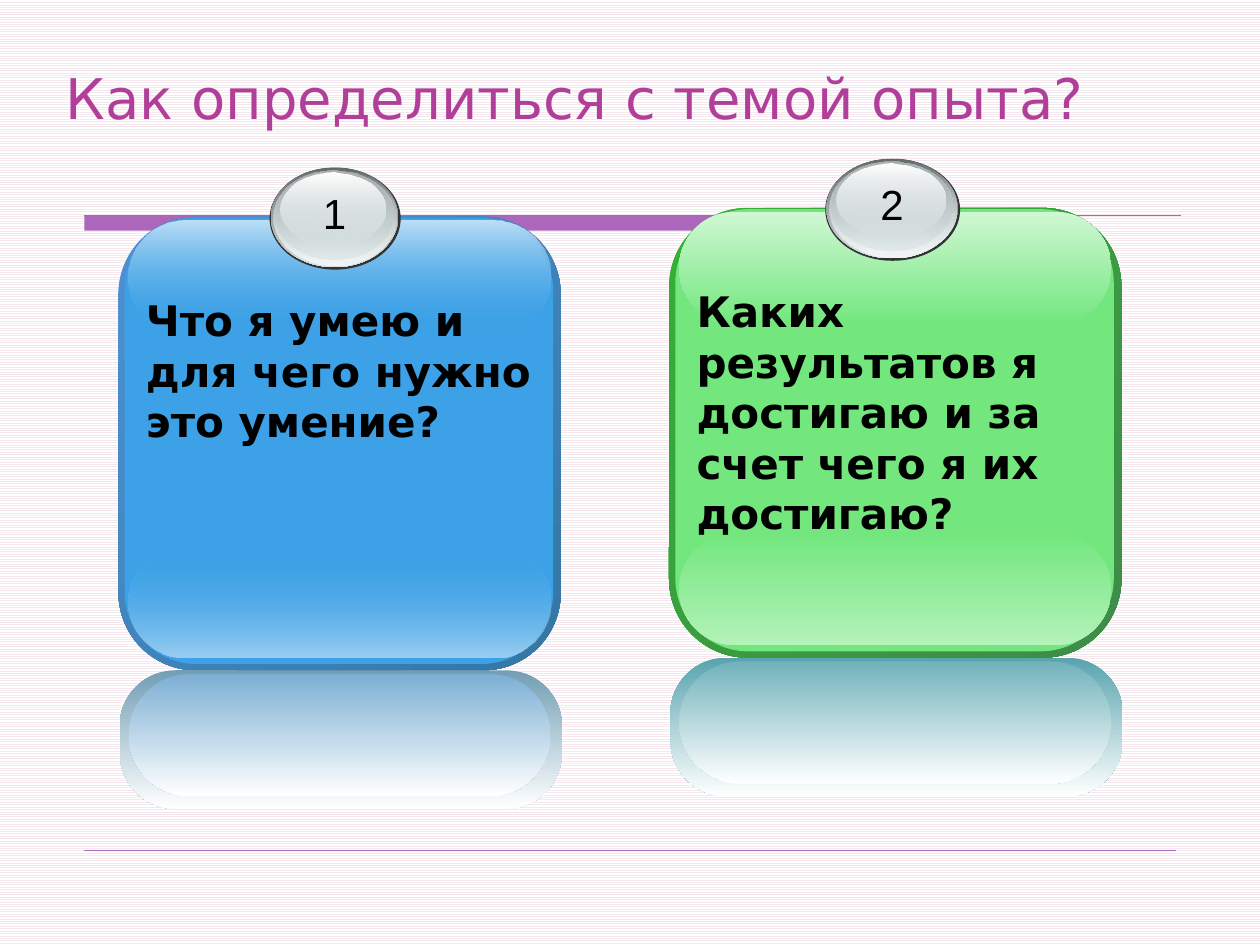
from lxml import etree
from pptx import Presentation
from pptx.dml.color import RGBColor
from pptx.enum.dml import MSO_PATTERN
from pptx.enum.shapes import MSO_CONNECTOR, MSO_SHAPE
from pptx.enum.text import MSO_ANCHOR, PP_ALIGN
from pptx.oxml.ns import qn
from pptx.util import Inches, Pt

RECT = MSO_SHAPE.RECTANGLE
ROUND = MSO_SHAPE.ROUNDED_RECTANGLE
OVAL = MSO_SHAPE.OVAL
STRAIGHT = MSO_CONNECTOR.STRAIGHT
STRIPES = MSO_PATTERN.LIGHT_HORIZONTAL
TOP, BOTTOM = MSO_ANCHOR.TOP, MSO_ANCHOR.BOTTOM
LEFT, CENTER = PP_ALIGN.LEFT, PP_ALIGN.CENTER

COLORS = {
    "stripe": "F4E7ED", "white": "FFFFFF", "black": "000000",
    "purple": "AC66BB", "title": "B13F9A",
    "rim": "333333", "steel": "636869", "silver": "D6E1E2",
    "pearl": "F1F5F5", "ash": "AAB2B3",
}
BLUE = {
    "edge": ("4E91D4", "3477A4"), "face": "3CA1E6", "top": "BEE0F7",
    "bottom": "9BCFF2", "mirror": ("729EB4", "7DAFD4"), "fade": 0,
}
GREEN = {
    "edge": ("34B034", "3F8B4A"), "face": "73E77E", "top": "D0F7D4",
    "bottom": "B3F2B9", "mirror": ("58A4AE", "72B2BB"), "fade": 100,
}
BADGE_LAYERS = [
    (0.01, 0, 0.03, 0.79, ("steel", 100), ("silver", 100)),
    (0.03, 0.01, 0.06, 0.77, ("silver", 0), ("pearl", 100)),
    (0.04, 0.02, 0.1, 0.71, ("ash", 100), ("silver", 48)),
    (0.09, 0.04, 0.21, 0.58, ("white", 100), ("silver", 38)),
]


def rgb(color):
    return RGBColor.from_string(COLORS.get(color, color))


class Deck:
    font = "DejaVu Sans"

    def __init__(self):
        self.prs = Presentation()
        self.prs.slide_width, self.prs.slide_height = Inches(10), Inches(7.5)
        self.s = self.prs.slides.add_slide(self.prs.slide_layouts[6])
        self.shapes = self.s.shapes

    def background(self, fore, back):
        fill = self.s.background.fill
        fill.patterned()
        fill.pattern = STRIPES
        fill.fore_color.rgb, fill.back_color.rgb = rgb(fore), rgb(back)

    def group(self):
        self.shapes = self.s.shapes.add_group_shape().shapes

    def shape(self, kind, x, y, w, h, color=None, adj=None):
        sp = self.shapes.add_shape(kind, Inches(x), Inches(y), Inches(w), Inches(h))
        sp.shadow.inherit = False
        sp.line.fill.background()
        if adj is not None:
            sp.adjustments[0] = adj
        if color:
            sp.fill.solid()
            sp.fill.fore_color.rgb = rgb(color)
        return sp

    def gradient(self, kind, x, y, w, h, start, end, adj=None, angle=90):
        sp = self.shape(kind, x, y, w, h, adj=adj)
        sp.fill.gradient()
        sp.fill.gradient_angle = 360 - angle
        for stop, position, (color, _) in zip(sp.fill.gradient_stops, (0, 1), (start, end)):
            stop.color.rgb = rgb(color)
            stop.position = position
        clrs = sp.element.spPr.findall(".//" + qn("a:srgbClr"))
        for clr, (_, alpha) in zip(clrs, (start, end)):
            if alpha < 100:
                etree.SubElement(clr, qn("a:alpha"), val=str(alpha * 1000))

    def line(self, x1, x2, y, color, width):
        c = self.shapes.add_connector(STRAIGHT, Inches(x1), Inches(y), Inches(x2), Inches(y))
        c.line.color.rgb = rgb(color)
        c.line.width = Pt(width)
        etree.SubElement(c.element.spPr, qn("a:effectLst"))

    def text(self, x, y, w, h, text, size, color="black", font=None, bold=False,
             align=LEFT, anchor=TOP, wrap=True, indent=0.1):
        tf = self.shapes.add_textbox(Inches(x), Inches(y), Inches(w), Inches(h)).text_frame
        tf.word_wrap = wrap
        tf.vertical_anchor = anchor
        tf.margin_left = Inches(indent)
        p = tf.paragraphs[0]
        p.text = text
        p.alignment = align
        f = p.runs[0].font
        f.name, f.size, f.bold = font or self.font, Pt(size), bold
        f.color.rgb = rgb(color)

    def badge(self, x, y, w, number):
        self.shape(OVAL, x, y, w, 0.81, "rim")
        for dx, dy, trim, h, start, end in BADGE_LAYERS:
            self.gradient(OVAL, x + dx, y + dy, w - trim, h, start, end)
        self.text(x + 0.23, y + 0.11, w - 0.47, 0.58, number, 24,
                  font="Arial", align=CENTER, wrap=False)

    def panel(self, x, y, w, h, look, number, badge_x, badge_w, text, text_h):
        self.group()
        start, end = look["edge"]
        face = (look["face"], look["fade"])
        gloss_x, gloss_w = x + 0.08, w - 0.16
        outer, inner = look["mirror"]
        white = ("white", 100)
        self.gradient(ROUND, x, y, w, h, (start, 100), (end, 100), 0.175, 45)
        self.shape(ROUND, x + 0.05, y + 0.01, w - 0.11, h - 0.06, look["face"], 0.167)
        self.gradient(ROUND, gloss_x, y + h - 0.99, gloss_w, 0.89,
                      face, (look["bottom"], 100), 0.5)
        self.gradient(ROUND, gloss_x, y + 0.03, gloss_w, 0.89,
                      (look["top"], 100), face, 0.5)
        self.gradient(ROUND, x + 0.01, y + h, w, 1.1, (outer, 100), white, 0.404)
        self.gradient(ROUND, gloss_x, y + h + 0.03, gloss_w, 0.97, (inner, 100), white, 0.5)
        self.badge(badge_x, y - 0.39, badge_w, number)
        self.text(x + 0.12, y + 0.57, w - 0.18, text_h, text, 24, bold=True)


def main():
    deck = Deck()
    deck.background("stripe", "white")
    deck.shape(RECT, 0.67, 1.71, 5.09, 0.12, "purple")
    deck.line(0.67, 9.37, 1.71, "purple", 0.75)
    deck.line(0.67, 9.33, 6.75, "purple", 0.25)
    deck.text(0, 0, 9.45, 1.09, "Как определиться с темой опыта?", 32,
              "title", anchor=BOTTOM, indent=0.52)
    deck.panel(0.94, 1.72, 3.51, 3.6, BLUE, "1", 2.14, 1.04,
               "Что я умею и для чего нужно это умение?", 1.31)
    deck.panel(5.31, 1.65, 3.59, 3.57, GREEN, "2", 6.55, 1.07,
               "Каких результатов я достигаю и за счет чего я их достигаю?", 2.12)
    deck.prs.save("out.pptx")


if __name__ == "__main__":
    main()
